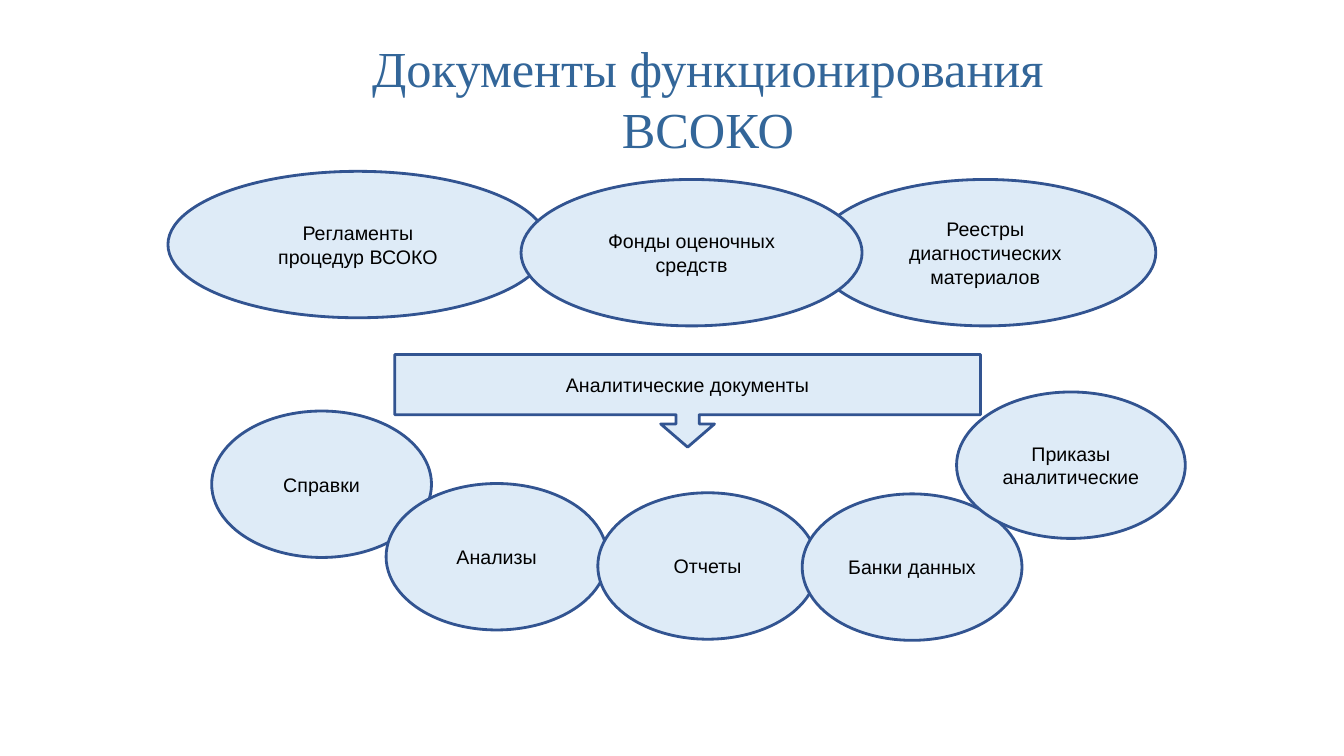
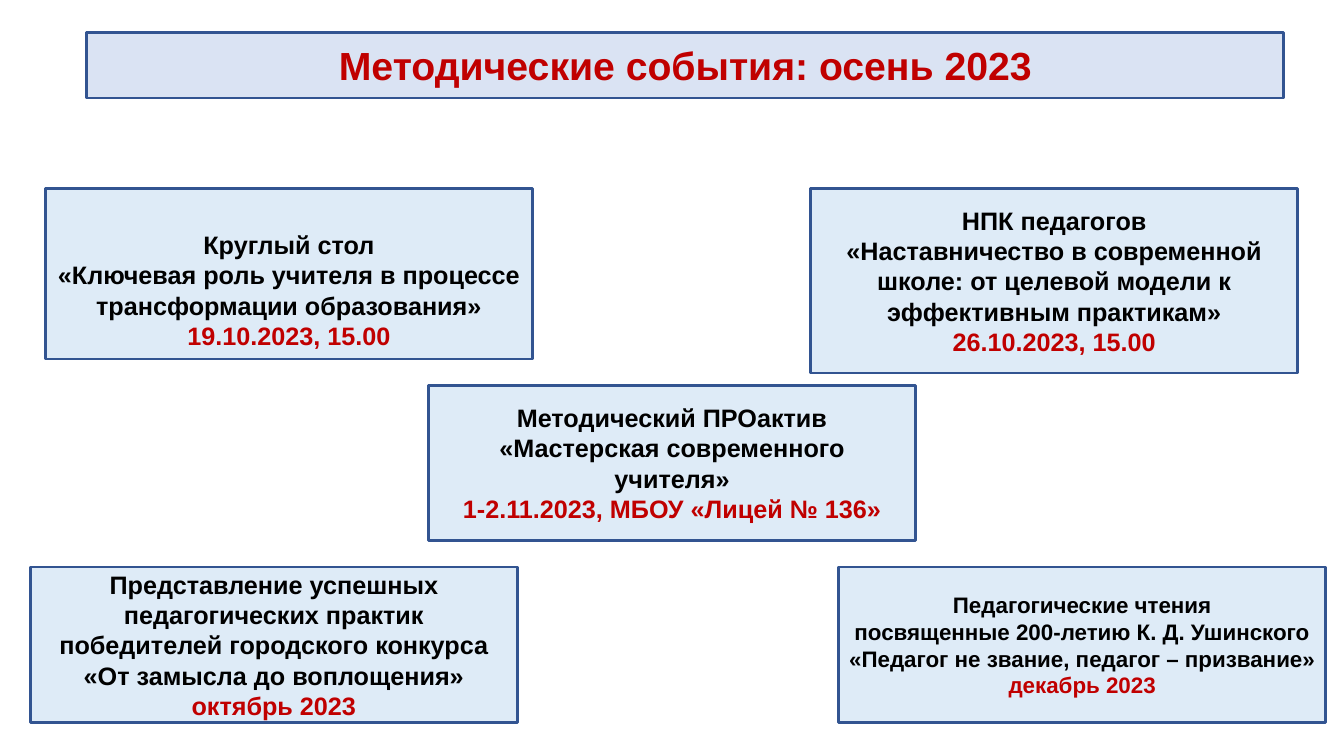
from pptx import Presentation
from pptx.dml.color import RGBColor
from pptx.enum import shapes, text
from pptx.util import Pt

PALE, BAND, EDGE = "DEEBF7", "DAE3F3", "325491"
BLACK, RED, TITLE_BLUE = "000000", "C00000", "336699"


def paint(shape, fill):
    """Give a shape the deck's flat fill and dark blue outline."""
    shape.shadow.inherit = False
    shape.fill.solid()
    shape.fill.fore_color.rgb = RGBColor.from_string(fill)
    shape.line.color.rgb = RGBColor.from_string(EDGE)
    shape.line.width = Pt(2)


def write(shape, lines, size=14, font="Arial", color=BLACK, last_color=None,
          bold=False, anchor=text.MSO_ANCHOR.MIDDLE, wrap=True):
    """Fill a shape with centred paragraphs; last_color marks the final one."""
    frame = shape.text_frame
    frame.auto_size = text.MSO_AUTO_SIZE.NONE
    frame.word_wrap = wrap
    frame.vertical_anchor = anchor
    for number, line in enumerate(lines, 1):
        para = frame.paragraphs[0] if number == 1 else frame.add_paragraph()
        para.alignment = text.PP_ALIGN.CENTER
        span = para.add_run()
        span.text = line
        span.font.size = Pt(size)
        span.font.name = font
        span.font.bold = bold
        is_last = number == len(lines)
        span.font.color.rgb = RGBColor.from_string(last_color if last_color and is_last else color)


deck = Presentation()
deck.slide_width, deck.slide_height = Pt(960), Pt(540)
title_only = deck.slide_layouts[5]

# Documents
page = deck.slides.add_slide(title_only)
title = page.shapes.title
title.left, title.top, title.width, title.height = Pt(222), Pt(23), Pt(567.4), Pt(57)
write(title, ["Документы функционирования ВСОКО"], size=36, font="Times New Roman",
      color=TITLE_BLUE, anchor=text.MSO_ANCHOR.TOP, wrap=False)

callout = page.shapes.add_shape(shapes.MSO_SHAPE.DOWN_ARROW_CALLOUT,
                                Pt(282), Pt(253.2), Pt(418.4), Pt(66.2))
for index, value in enumerate((0.25, 0.29, 0.25, 0.65)):
    callout.adjustments[index] = value
paint(callout, PALE)
write(callout, ["Аналитические документы"])

OVAL_HEIGHT = 104.6
ovals = [  # left, top, width, lines
    (120, 122.4, 271.4, ["Регламенты", "процедур ВСОКО"]),
    (151.2, 293.6, 157, ["Справки"]),
    (275.8, 345.4, 158, ["Анализы"]),
    (427, 352, 157, ["Отчеты"]),
    (573, 352.8, 157, ["Банки данных"]),
    (683.3, 280, 163.4, ["Приказы аналитические"]),
    (582, 128.2, 243.6, ["Реестры диагностических материалов"]),
    (372.2, 128.2, 243.6, ["Фонды оценочных средств"]),
]
for left, top, width, lines in ovals:
    oval = page.shapes.add_shape(shapes.MSO_SHAPE.OVAL, Pt(left), Pt(top), Pt(width), Pt(OVAL_HEIGHT))
    paint(oval, PALE)
    write(oval, lines)

# Autumn events
page = deck.slides.add_slide(title_only)
title = page.shapes.title
title.left, title.top, title.width, title.height = Pt(62), Pt(23), Pt(855), Pt(47)
paint(title, BAND)
write(title, ["Методические события: осень 2023"], size=28, color=RED, bold=True)

CARD_WIDTH = 348
events = [  # left, top, height, top inset, text size, lines (date last)
    (32.4, 134.5, 122, 26.8, 18, [
        "Круглый стол",
        "«Ключевая роль учителя в процессе трансформации образования»",
        "19.10.2023, 15.00"]),
    (579, 134.5, 132, 3.6, 18, [
        "НПК педагогов",
        "«Наставничество в современной школе: от целевой модели к эффективным практикам»",
        "26.10.2023, 15.00"]),
    (306, 275.2, 111, 3.6, 18, [
        "Методический ПРОактив «Мастерская современного учителя»",
        "1-2.11.2023, МБОУ «Лицей № 136»"]),
    (21.6, 405, 111, 3.6, 18, [
        "Представление успешных педагогических практик победителей городского конкурса "
        "«От замысла до воплощения»",
        "октябрь 2023"]),
    (599, 405, 111, 3.6, 16, [
        "Педагогические чтения",
        "посвященные 200-летию К. Д. Ушинского",
        "«Педагог не звание, педагог – призвание»",
        "декабрь 2023"]),
]
for left, top, height, inset, size, lines in events:
    card = page.shapes.add_shape(shapes.MSO_SHAPE.RECTANGLE,
                                 Pt(left), Pt(top), Pt(CARD_WIDTH), Pt(height))
    paint(card, PALE)
    write(card, lines, size=size, last_color=RED, bold=True)
    card.text_frame.margin_top = Pt(inset)

deck.save("out.pptx")
